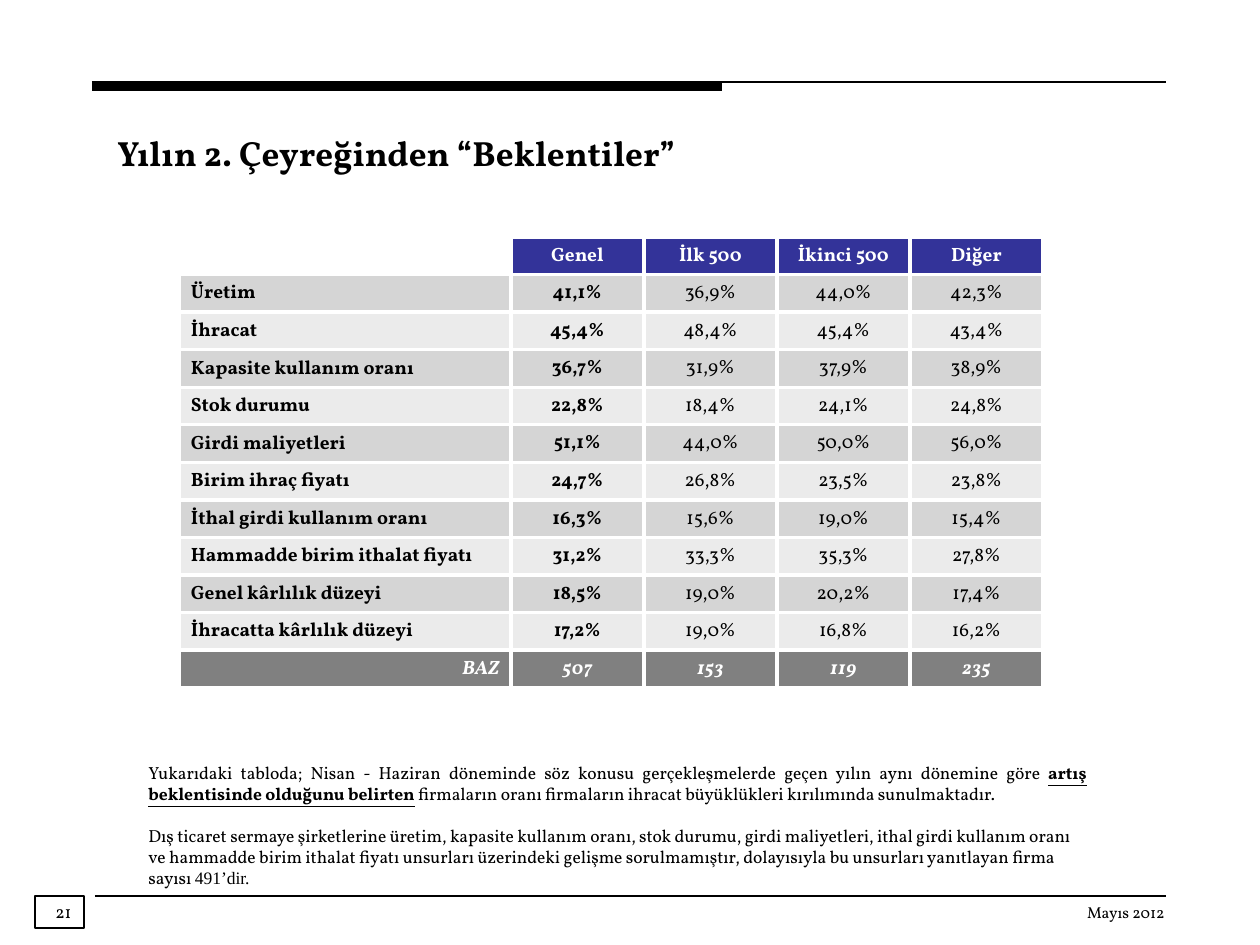
import dataclasses

import lxml.etree
import pptx
import pptx.dml.color
import pptx.enum.shapes
import pptx.enum.text
import pptx.oxml.ns
import pptx.util

ALIGN = pptx.enum.text.PP_ALIGN
ANCHOR = pptx.enum.text.MSO_ANCHOR


@dataclasses.dataclass(frozen=True)
class Theme:
    font: str = "Vollkorn"
    digits_font: str = "Times New Roman"
    black: str = "000000"
    white: str = "FFFFFF"
    header: str = "333399"
    odd_row: str = "D5D5D5"
    even_row: str = "EBEBEB"
    base_row: str = "808080"
    title_size: int = 20
    table_size: int = 11
    body_size: int = 10
    date_size: int = 9
    thin: float = 0.75
    thick: float = 6
    border: float = 2.25


THEME = Theme()
EMU_PER_PX = 914400 / 126

TITLE = "Yılın 2. Çeyreğinden “Beklentiler”"
DATE = "Mayıs 2012"
PAGE_NUMBER = "21"
ROWS = [
    ("", "Genel", "İlk 500", "İkinci 500", "Diğer"),
    ("Üretim", "41,1%", "36,9%", "44,0%", "42,3%"),
    ("İhracat", "45,4%", "48,4%", "45,4%", "43,4%"),
    ("Kapasite kullanım oranı", "36,7%", "31,9%", "37,9%", "38,9%"),
    ("Stok durumu", "22,8%", "18,4%", "24,1%", "24,8%"),
    ("Girdi maliyetleri", "51,1%", "44,0%", "50,0%", "56,0%"),
    ("Birim ihraç fiyatı", "24,7%", "26,8%", "23,5%", "23,8%"),
    ("İthal girdi kullanım oranı", "16,3%", "15,6%", "19,0%", "15,4%"),
    ("Hammadde birim ithalat fiyatı", "31,2%", "33,3%", "35,3%", "27,8%"),
    ("Genel kârlılık düzeyi", "18,5%", "19,0%", "20,2%", "17,4%"),
    ("İhracatta kârlılık düzeyi", "17,2%", "19,0%", "16,8%", "16,2%"),
    ("BAZ", "507", "153", "119", "235"),
]
STRONG = {"bold": True, "underline": True}
NOTES = [
    [
        ("Yukarıdaki tabloda; Nisan - Haziran döneminde söz konusu gerçekleşmelerde "
         "geçen yılın aynı dönemine göre ", {}),
        ("artış", STRONG),
        (" ", {}),
        ("beklentisinde olduğunu belirten", STRONG),
        (" firmaların oranı firmaların ihracat büyüklükleri kırılımında sunulmaktadır. ", {}),
    ],
    [("Dış ticaret sermaye şirketlerine üretim, kapasite kullanım oranı, stok durumu, "
      "girdi maliyetleri, ithal girdi kullanım oranı ", {})],
    [("ve hammadde birim ithalat fiyatı unsurları üzerindeki gelişme sorulmamıştır, "
      "dolayısıyla bu unsurları yanıtlayan firma ", {})],
    [("sayısı ", {}), ("491’dir.", {"font": THEME.digits_font})],
]
NOTE_GAPS = [0, 12, 0, 0]
RULES = [
    ((95, 896), (1166, 896), THEME.thin),
    ((92, 86), (722, 86), THEME.thick),
    ((95, 82), (1166, 82), THEME.thin),
]
TABLE_AREA = (179, 237, 864, 451)
LABEL_WIDTH = 332


def px(length):
    return pptx.util.Emu(round(length * EMU_PER_PX))


def rgb(color):
    return pptx.dml.color.RGBColor.from_string(color)


def write(para, text, *, size, color=THEME.black, font=THEME.font,
          bold=False, italic=False, underline=False):
    span = para.add_run()
    span.text = text
    span.font.name = font
    span.font.size = pptx.util.Pt(size)
    span.font.color.rgb = rgb(color)
    span.font.bold = bold
    span.font.italic = italic
    span.font.underline = underline


def add_box(page, area, wrap=True):
    box = page.shapes.add_textbox(*map(px, area))
    box.text_frame.word_wrap = wrap
    return box.text_frame


def add_rule(page, start, end, width):
    line = page.shapes.add_connector(
        pptx.enum.shapes.MSO_CONNECTOR.STRAIGHT, *map(px, start + end))
    line.line.color.rgb = rgb(THEME.black)
    line.line.width = pptx.util.Pt(width)
    lxml.etree.SubElement(line.element.spPr, pptx.oxml.ns.qn("a:effectLst"))


def border_cell(cell):
    properties = cell._tc.get_or_add_tcPr()
    for side in ("a:lnL", "a:lnR", "a:lnT", "a:lnB"):
        edge = lxml.etree.SubElement(properties, pptx.oxml.ns.qn(side),
                                     w=str(pptx.util.Pt(THEME.border)))
        fill = lxml.etree.SubElement(edge, pptx.oxml.ns.qn("a:solidFill"))
        lxml.etree.SubElement(fill, pptx.oxml.ns.qn("a:srgbClr"), val=THEME.white)


def cell_look(row, column):
    last = len(ROWS) - 1
    if row == 0:
        return (THEME.header if column else THEME.white), THEME.white
    if row == last:
        return THEME.base_row, THEME.white
    return (THEME.odd_row if row % 2 else THEME.even_row), THEME.black


def fill_cell(cell, text, row, column):
    is_base = row == len(ROWS) - 1
    is_value = column > 0 and row > 0 and not is_base
    background, color = cell_look(row, column)
    border_cell(cell)
    cell.fill.solid()
    cell.fill.fore_color.rgb = rgb(background)
    cell.vertical_anchor = ANCHOR.MIDDLE if is_value else ANCHOR.BOTTOM
    cell.margin_left = cell.margin_right = px(1 if is_value else 12)
    cell.margin_top = px(1 if is_value else 6)
    cell.margin_bottom = px(0 if is_value else 6)
    para = cell.text_frame.paragraphs[0]
    if column:
        para.alignment = ALIGN.CENTER
    else:
        para.alignment = ALIGN.RIGHT if is_base else ALIGN.LEFT
    if text:
        write(para, text, size=THEME.table_size, color=color,
              bold=not is_value or column == 1, italic=is_base)
    else:
        lxml.etree.SubElement(para._p, pptx.oxml.ns.qn("a:endParaRPr"),
                              sz=str(THEME.table_size * 100))


def add_results(page):
    left, top, width, height = TABLE_AREA
    columns = len(ROWS[0])
    table = page.shapes.add_table(len(ROWS), columns, *map(px, TABLE_AREA)).table
    table.first_row = table.horz_banding = False
    for index, column in enumerate(table.columns):
        column.width = px((width - LABEL_WIDTH) / (columns - 1) if index else LABEL_WIDTH)
    for row in table.rows:
        row.height = px(height / len(ROWS))
    for row, values in enumerate(ROWS):
        for column, text in enumerate(values):
            fill_cell(table.cell(row, column), text, row, column)


def add_footer(page):
    date = add_box(page, (1072, 897, 105, 32), wrap=False).paragraphs[0]
    date.alignment = ALIGN.RIGHT
    write(date, DATE, size=THEME.date_size)
    frame = page.shapes.add_shape(
        pptx.enum.shapes.MSO_SHAPE.RECTANGLE, *map(px, (35, 896, 49, 32)))
    frame.shadow.inherit = False
    frame.fill.background()
    frame.line.color.rgb = rgb(THEME.black)
    frame.line.width = pptx.util.Pt(THEME.thin)
    number = add_box(page, (43, 895, 315, 50)).paragraphs[0]
    write(number, PAGE_NUMBER, size=THEME.body_size)


def add_notes(page):
    frame = add_box(page, (136, 756, 963, 139))
    for index, (spans, gap) in enumerate(zip(NOTES, NOTE_GAPS)):
        para = frame.add_paragraph() if index else frame.paragraphs[0]
        para.alignment = ALIGN.JUSTIFY
        if gap:
            para.space_before = pptx.util.Pt(gap)
        for text, style in spans:
            write(para, text, size=THEME.body_size, **style)


def main():
    deck = pptx.Presentation()
    deck.slide_width, deck.slide_height = px(1260), px(945)
    page = deck.slides.add_slide(deck.slide_layouts[6])
    for start, end, width in RULES:
        add_rule(page, start, end, width)
    add_footer(page)
    add_results(page)
    title = add_box(page, (105, 125, 793, 54)).paragraphs[0]
    write(title, TITLE, size=THEME.title_size, bold=True)
    add_notes(page)
    deck.save("out.pptx")


if __name__ == "__main__":
    main()
